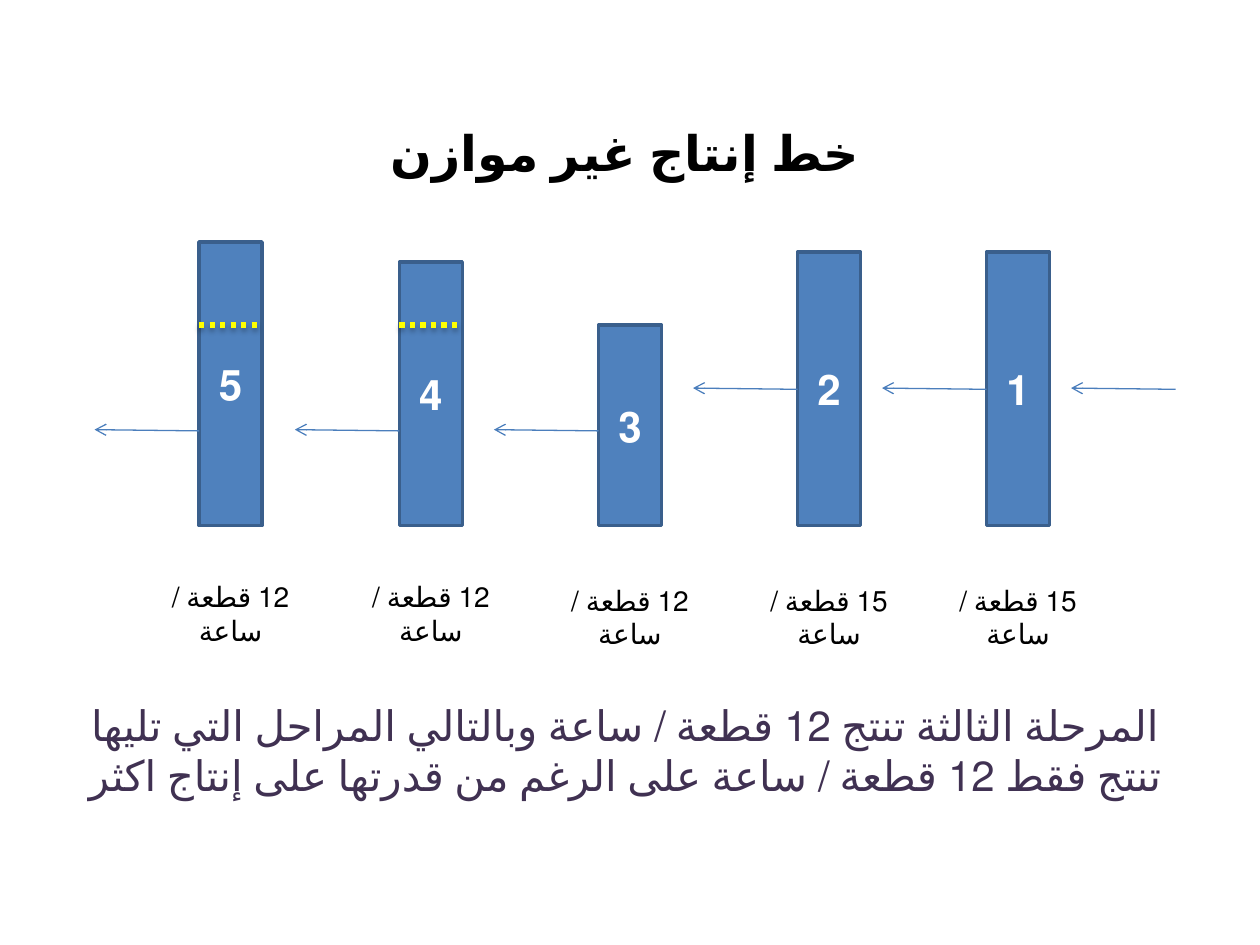
import pptx
import pptx.dml.color
import pptx.enum.dml
import pptx.enum.lang
import pptx.enum.shapes
import pptx.enum.text
import pptx.oxml.ns
import pptx.util
from lxml import etree
from pptx.util import Inches

RGBColor = pptx.dml.color.RGBColor
BLUE = RGBColor(0x4F, 0x81, 0xBD)
BORDER = RGBColor(0x3A, 0x5F, 0x8C)
ARROW = RGBColor(0x4B, 0x7E, 0xBC)
YELLOW = RGBColor(0xFF, 0xFF, 0x00)
PURPLE = RGBColor(0x40, 0x31, 0x52)
BLACK = RGBColor(0, 0, 0)
WHITE = RGBColor(0xFF, 0xFF, 0xFF)

ARABIC = pptx.enum.lang.MSO_LANGUAGE_ID.ARABIC_EGYPT
BAR_WIDTH, BAR_BOTTOM = 0.5, 4.17
ARROW_LENGTH = 0.83
LIMIT_Y = 2.58
STAGES = [
    ("1", 7.83, 2.0, 3.08, 4.58, 15, False),
    ("2", 6.33, 2.0, 3.08, 4.58, 15, False),
    ("3", 4.75, LIMIT_Y, 3.42, 4.58, 12, False),
    ("4", 3.17, 2.08, 3.42, 4.55, 12, True),
    ("5", 1.58, 1.92, 3.42, 4.55, 12, True),
]
TITLE = "خط إنتاج غير موازن"
SUMMARY = ("المرحلة الثالثة تنتج 12 قطعة / ساعة وبالتالي المراحل التي تليها "
           "تنتج فقط 12 قطعة / ساعة على الرغم من قدرتها على إنتاج اكثر")


def set_attributes(obj, values):
    """Set each named attribute of obj."""
    for name, value in values.items():
        setattr(obj, name, value)


def write_text(tf, text, size, color, bold=False):
    """Write one centred right-to-left paragraph."""
    tf.word_wrap = True
    p = tf.paragraphs[0]
    p.alignment = pptx.enum.text.PP_ALIGN.CENTER
    p._p.get_or_add_pPr().set("rtl", "1")
    r = p.add_run()
    r.text = text
    set_attributes(r.font, {"name": "Calibri", "size": pptx.util.Pt(size),
                            "bold": bold, "language_id": ARABIC})
    r.font.color.rgb = color


def add_text(s, box, text, size, color=BLACK, bold=False):
    """Add a text box that grows with its text."""
    sp = s.shapes.add_textbox(*map(Inches, box))
    write_text(sp.text_frame, text, size, color, bold)
    sp.text_frame.auto_size = pptx.enum.text.MSO_AUTO_SIZE.SHAPE_TO_FIT_TEXT


def add_bar(s, left, top, number):
    """Add a numbered stage bar standing on the common base."""
    sp = s.shapes.add_shape(pptx.enum.shapes.MSO_SHAPE.RECTANGLE, Inches(left), Inches(top),
                            Inches(BAR_WIDTH), Inches(BAR_BOTTOM - top))
    sp.shadow.inherit = False
    sp.fill.solid()
    sp.fill.fore_color.rgb = BLUE
    sp.line.color.rgb = BORDER
    sp.line.width = pptx.util.Pt(2)
    sp.text_frame.vertical_anchor = pptx.enum.text.MSO_ANCHOR.MIDDLE
    write_text(sp.text_frame, number, 24, WHITE, True)


def add_line(s, start, end, y, color, width, rise=0):
    """Add a line and return it with its empty effect list."""
    c = s.shapes.add_connector(pptx.enum.shapes.MSO_CONNECTOR.STRAIGHT,
                               Inches(start), Inches(y + rise), Inches(end), Inches(y))
    c.line.color.rgb = color
    c.line.width = pptx.util.Pt(width)
    effects = etree.SubElement(c._element.spPr, pptx.oxml.ns.qn("a:effectLst"))
    return c, effects


def add_arrow(s, start, y):
    """Add a flow arrow pointing left."""
    c, _ = add_line(s, start, start - ARROW_LENGTH, y, ARROW, 0.75, rise=0.01)
    etree.SubElement(c.line._get_or_add_ln(), pptx.oxml.ns.qn("a:tailEnd"), type="arrow")


def add_limit(s, left):
    """Add the dotted, shadowed mark of the usable capacity."""
    qn = pptx.oxml.ns.qn
    c, effects = add_line(s, left, left + BAR_WIDTH, LIMIT_Y, YELLOW, 3)
    c.line.dash_style = pptx.enum.dml.MSO_LINE.ROUND_DOT
    shadow = etree.SubElement(effects, qn("a:outerShdw"), blurRad="40000", dist="23000",
                              dir="5400000", rotWithShape="0")
    shade = etree.SubElement(shadow, qn("a:srgbClr"), val=str(BLACK))
    etree.SubElement(shade, qn("a:alpha"), val="35000")


def main():
    """Build the slide of the unbalanced production line."""
    prs = pptx.Presentation()
    set_attributes(prs, {"slide_width": Inches(10), "slide_height": Inches(7.5)})
    s = prs.slides.add_slide(prs.slide_layouts[6])
    add_text(s, (1.92, 0.92, 6.08, 0.57), TITLE, 28, bold=True)
    add_arrow(s, 9.33, 3.08)
    for number, left, top, arrow_y, label_top, rate, limited in STAGES:
        add_bar(s, left, top, number)
        add_arrow(s, left, arrow_y - (0.01 if arrow_y > 3.4 else 0))
        add_text(s, (left - 0.5, label_top, 1.5, 0.37), f"{rate} قطعة / ساعة", 16)
        if limited:
            add_limit(s, left)
    add_text(s, (0.5, 5.5, 8.92, 0.91), SUMMARY, 24, PURPLE)
    prs.save("out.pptx")


if __name__ == "__main__":
    main()
